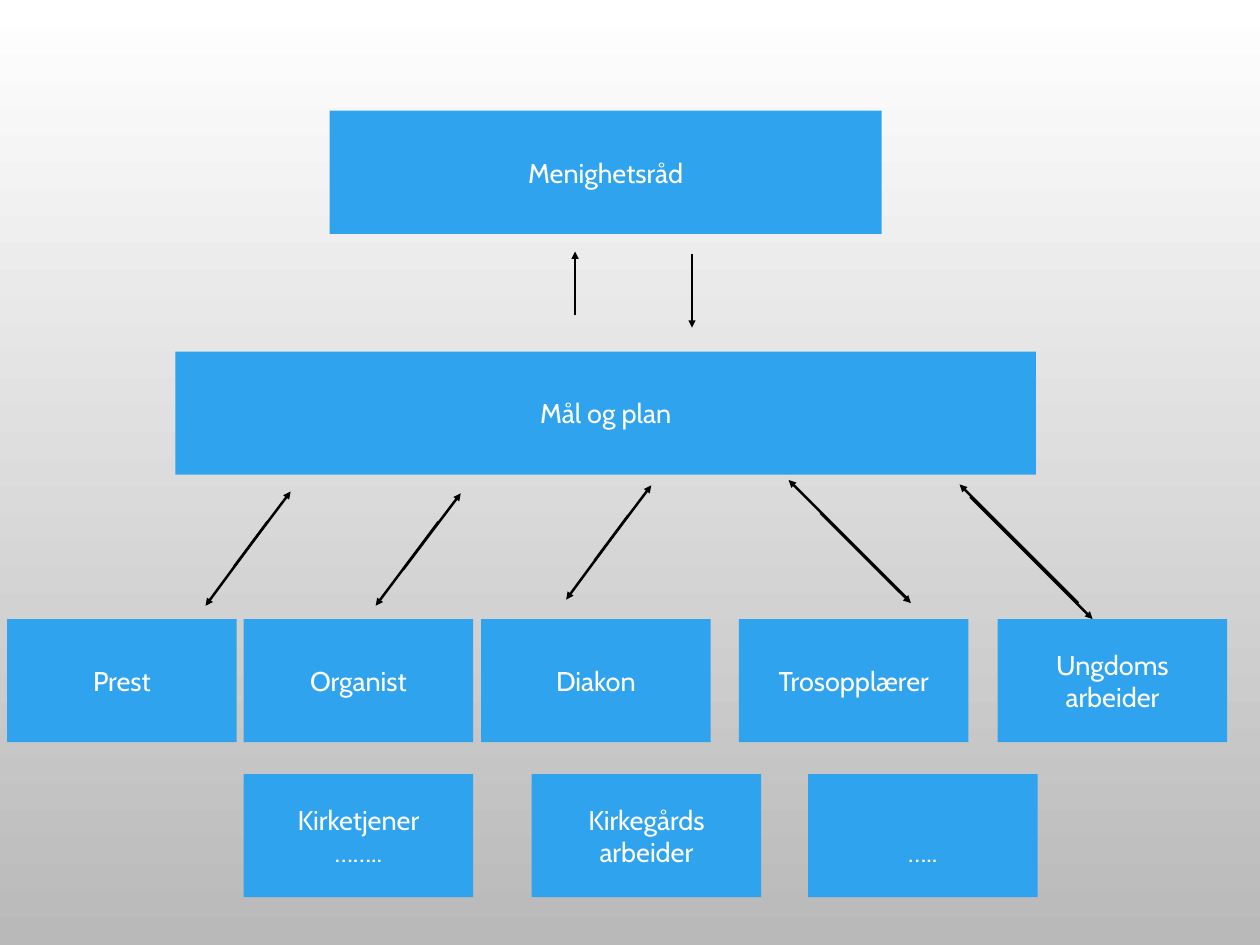
"""Build the slide showing how the parish council, the plan and the staff relate."""
import dataclasses

import lxml.etree
import pptx
import pptx.dml.color
import pptx.enum.dml
import pptx.enum.shapes
import pptx.enum.text
import pptx.oxml.ns
import pptx.slide
import pptx.util

Inches = pptx.util.Inches


@dataclasses.dataclass(frozen=True)
class Theme:
    background_top: str = "FFFFFF"
    background_bottom: str = "B9B9B9"
    box: str = "2FA3EE"
    text: str = "FFFFFF"
    arrow: str = "000000"
    font: str = "Cabin"
    text_size: float = 22
    arrow_width: float = 2


@dataclasses.dataclass(frozen=True)
class Box:
    text: str
    left: float
    top: float
    width: float
    top_inset: float = 0.06


@dataclasses.dataclass(frozen=True)
class Arrow:
    start: tuple[float, float]
    end: tuple[float, float]


THEME = Theme()
BOX_HEIGHT = 1.39
INSET = 0.06
STAFF_WIDTH = 2.59
STAFF_TOP = 6.99
OTHER_STAFF_TOP = 8.74
LINE_HEIGHT = 0.36

BOXES = [
    Box("Menighetsråd", 3.72, 1.25, 6.23),
    Box("Mål og plan", 1.98, 3.97, 9.71),
    Box("Prest", 0.08, STAFF_TOP, STAFF_WIDTH),
    Box("Organist", 2.75, STAFF_TOP, STAFF_WIDTH),
    Box("Diakon", 5.43, STAFF_TOP, STAFF_WIDTH),
    Box("Trosopplærer", 8.34, STAFF_TOP, STAFF_WIDTH),
    Box("Ungdoms\narbeider", 11.26, STAFF_TOP, STAFF_WIDTH),
    Box("Kirketjener\n……..", 2.75, OTHER_STAFF_TOP, STAFF_WIDTH),
    Box("Kirkegårds\narbeider", 6, OTHER_STAFF_TOP, STAFF_WIDTH),
    Box("…..", 9.12, OTHER_STAFF_TOP, STAFF_WIDTH, INSET + LINE_HEIGHT),
]

ARROWS = [
    Arrow((10.95, 5.61), (12.33, 6.99)),
    Arrow((12.17, 6.81), (10.83, 5.47)),
    Arrow((9.26, 5.79), (10.28, 6.81)),
    Arrow((10.24, 6.76), (8.9, 5.42)),
    Arrow((7.09, 5.82), (6.39, 6.77)),
    Arrow((6.71, 6.33), (7.35, 5.48)),
    Arrow((4.95, 5.89), (4.24, 6.84)),
    Arrow((4.55, 6.43), (5.2, 5.57)),
    Arrow((3.02, 5.89), (2.32, 6.84)),
    Arrow((2.64, 6.4), (3.28, 5.55)),
    Arrow((7.81, 2.87), (7.81, 3.7)),
    Arrow((6.49, 3.56), (6.49, 2.84)),
]


def rgb(value: str) -> pptx.dml.color.RGBColor:
    return pptx.dml.color.RGBColor.from_string(value)


def paint_background(slide: pptx.slide.Slide) -> None:
    fill = slide.background.fill
    fill.gradient()
    fill.gradient_angle = 270
    colours = (THEME.background_top, THEME.background_bottom)
    for stop, colour, position in zip(fill.gradient_stops, colours, (0, 1)):
        stop.color.rgb = rgb(colour)
        stop.position = position


def draw_box(slide: pptx.slide.Slide, box: Box) -> None:
    shape = slide.shapes.add_shape(
        pptx.enum.shapes.MSO_SHAPE.RECTANGLE,
        Inches(box.left), Inches(box.top), Inches(box.width), Inches(BOX_HEIGHT),
    )
    shape.shadow.inherit = False
    shape.fill.solid()
    shape.fill.fore_color.rgb = rgb(THEME.box)
    shape.line.fill.background()
    frame = shape.text_frame
    frame.word_wrap = True
    frame.vertical_anchor = pptx.enum.text.MSO_ANCHOR.MIDDLE
    frame.margin_left = frame.margin_right = frame.margin_bottom = Inches(INSET)
    frame.margin_top = Inches(box.top_inset)
    frame.text = box.text
    for paragraph in frame.paragraphs:
        paragraph.alignment = pptx.enum.text.PP_ALIGN.CENTER
        paragraph.font.name = THEME.font
        paragraph.font.size = pptx.util.Pt(THEME.text_size)
        paragraph.font.color.rgb = rgb(THEME.text)


def draw_arrow(slide: pptx.slide.Slide, arrow: Arrow) -> None:
    connector = slide.shapes.add_connector(
        pptx.enum.shapes.MSO_CONNECTOR.STRAIGHT,
        *map(Inches, arrow.start + arrow.end),
    )
    connector.line.color.rgb = rgb(THEME.arrow)
    connector.line.width = pptx.util.Pt(THEME.arrow_width)
    qualified = pptx.oxml.ns.qn
    lxml.etree.SubElement(connector.get_or_add_ln(), qualified("a:tailEnd"), type="triangle")
    lxml.etree.SubElement(connector.element.spPr, qualified("a:effectLst"))


def main() -> None:
    presentation = pptx.Presentation()
    presentation.slide_width = Inches(14.22)
    presentation.slide_height = Inches(10.67)
    slide = presentation.slides.add_slide(presentation.slide_layouts[6])
    paint_background(slide)
    for box in BOXES:
        draw_box(slide, box)
    for arrow in ARROWS:
        draw_arrow(slide, arrow)
    presentation.save("out.pptx")


if __name__ == "__main__":
    main()
